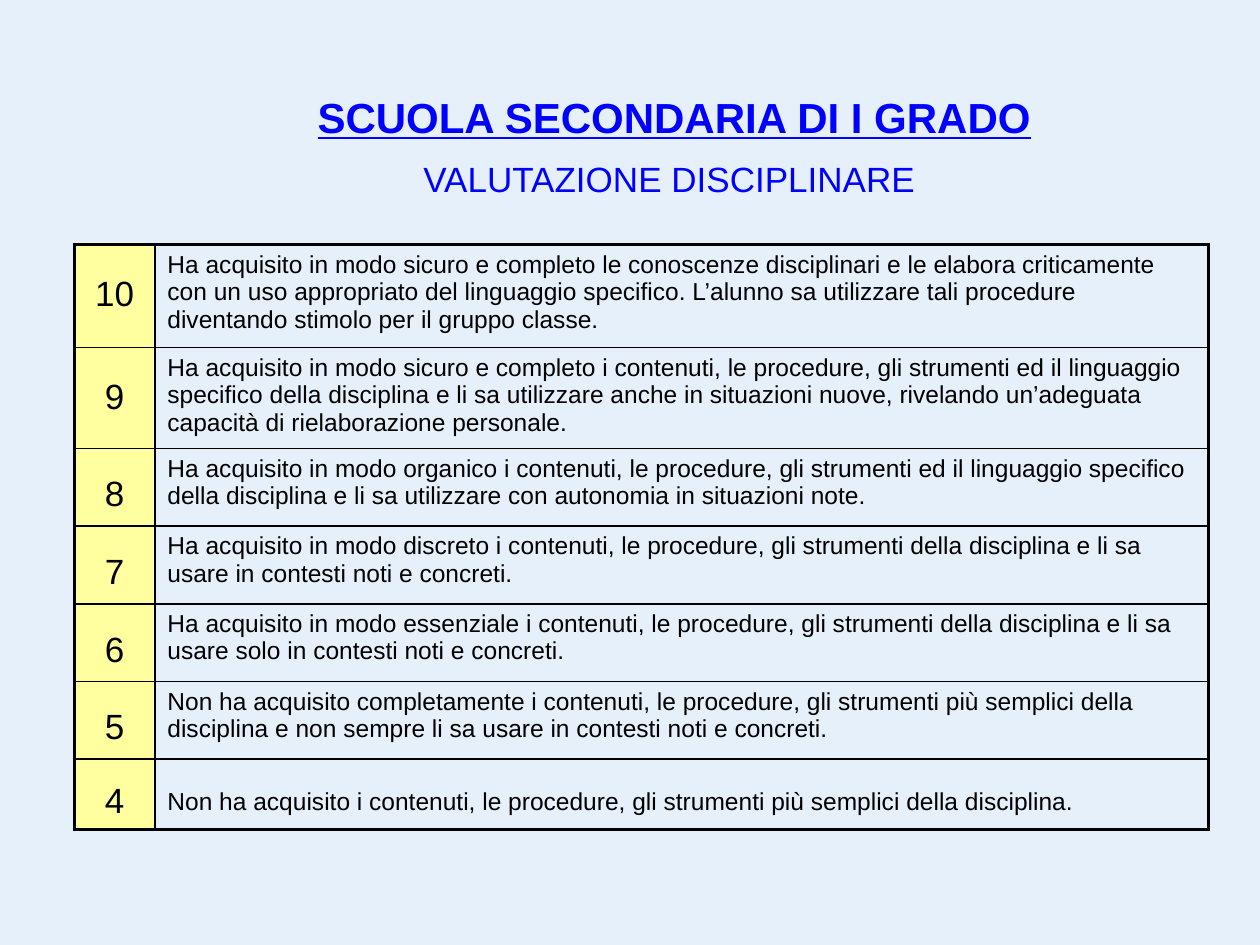
import lxml.etree
import pptx
import pptx.dml.color
import pptx.enum.text
import pptx.oxml.ns
import pptx.util

Pt = pptx.util.Pt
ALIGN = pptx.enum.text.PP_ALIGN
ANCHOR = pptx.enum.text.MSO_ANCHOR

GRADES = [
    ("10", 59, 17.5, 3.6, "Ha acquisito in modo sicuro e completo le conoscenze disciplinari e le elabora "
     "criticamente con un uso appropriato del linguaggio specifico. L’alunno sa utilizzare tali "
     "procedure diventando stimolo per il gruppo classe."),
    ("9", 57.6, 17.5, 3.6, "Ha acquisito in modo sicuro e completo i contenuti, le procedure, gli strumenti ed "
     "il linguaggio specifico della disciplina e li sa utilizzare anche in situazioni nuove, "
     "rivelando un’adeguata capacità di rielaborazione personale."),
    ("8", 44.4, 15.2, 3.6, "Ha acquisito in modo organico i contenuti, le procedure, gli strumenti ed il "
     "linguaggio specifico della disciplina e li sa utilizzare con autonomia in situazioni note."),
    ("7", 44.4, 15.2, 3.6, "Ha acquisito in modo discreto i contenuti, le procedure, gli strumenti della "
     "disciplina e li sa usare in contesti noti e concreti."),
    ("6", 44.4, 15.2, 3.6, "Ha acquisito in modo essenziale i contenuti, le procedure, gli strumenti della "
     "disciplina e li sa usare solo in contesti noti e concreti."),
    ("5", 44.4, 15.2, 3.6, "Non ha acquisito completamente i contenuti, le procedure, gli strumenti più "
     "semplici della disciplina e non sempre li sa usare in contesti noti e concreti."),
    ("4", 40.3, 12.9, 16.4, "Non ha acquisito i contenuti, le procedure, gli strumenti più semplici "
     "della disciplina."),
]


def color(value):
    return pptx.dml.color.RGBColor.from_string(value)


def write(paragraph, text, size, ink="000000", align=ALIGN.LEFT, bold=False, underline=False, before=0):
    paragraph.alignment = align
    paragraph.space_before = Pt(before)
    run = paragraph.add_run()
    run.text = text
    run.font.name = "Arial"
    run.font.size = Pt(size)
    run.font.bold = bold
    run.font.underline = underline
    run.font.color.rgb = color(ink)


class GradeSlide:
    ink = "000000"
    heading_ink = "0000FF"
    grade_fill = "FFFF9F"
    outer, inner = 2.25, 1

    def __init__(self, deck, background):
        self.slide = deck.slides.add_slide(deck.slide_layouts[6])
        self.slide.background.fill.solid()
        self.slide.background.fill.fore_color.rgb = color(background)

    def heading(self, title, subtitle, left, top, width, height):
        frame = self.slide.shapes.add_textbox(Pt(left), Pt(top), Pt(width), Pt(height)).text_frame
        frame.word_wrap = True
        frame.vertical_anchor = ANCHOR.MIDDLE
        write(frame.paragraphs[0], title, 24, self.heading_ink, ALIGN.CENTER, bold=True, underline=True)
        write(frame.add_paragraph(), subtitle, 20, self.heading_ink, ALIGN.CENTER, before=9.2)

    def border(self, cell, **widths):
        properties = cell._tc.get_or_add_tcPr()
        for side, width in widths.items():
            line = lxml.etree.SubElement(properties, pptx.oxml.ns.qn(f"a:ln{side}"), w=str(Pt(width)))
            fill = lxml.etree.SubElement(line, pptx.oxml.ns.qn("a:solidFill"))
            lxml.etree.SubElement(fill, pptx.oxml.ns.qn("a:srgbClr"), val=self.ink)

    def grade_table(self, grades, left, top, widths):
        heights = [height for _, height, *_ in grades]
        table = self.slide.shapes.add_table(
            len(grades), len(widths), Pt(left), Pt(top), Pt(sum(widths)), Pt(sum(heights))).table
        table.first_row = table.horz_banding = False
        for column, width in zip(table.columns, widths):
            column.width = Pt(width)
        for index, (grade, height, grade_top, text_top, description) in enumerate(grades):
            table.rows[index].height = Pt(height)
            grade_cell, text_cell = table.rows[index].cells
            above = self.outer if index == 0 else self.inner
            below = self.outer if index == len(grades) - 1 else self.inner
            self.border(grade_cell, L=self.outer, R=self.inner, T=above, B=below)
            self.border(text_cell, L=self.inner, R=self.outer, T=above, B=below)
            grade_cell.fill.solid()
            grade_cell.fill.fore_color.rgb = color(self.grade_fill)
            text_cell.fill.background()
            grade_cell.margin_top = Pt(grade_top)
            text_cell.margin_top = Pt(text_top)
            write(grade_cell.text_frame.paragraphs[0], grade, 20, self.ink, ALIGN.CENTER)
            write(text_cell.text_frame.paragraphs[0], description, 14, self.ink)


def main():
    deck = pptx.Presentation()
    deck.slide_width, deck.slide_height = Pt(720), Pt(540)
    slide = GradeSlide(deck, "E5F0FA")
    slide.grade_table(GRADES, 42.5, 139.7, [46, 602])
    slide.heading("SCUOLA SECONDARIA DI I GRADO", "VALUTAZIONE DISCIPLINARE ", 70.6, 54.7, 629.3, 56.9)
    deck.save("out.pptx")


if __name__ == "__main__":
    main()
